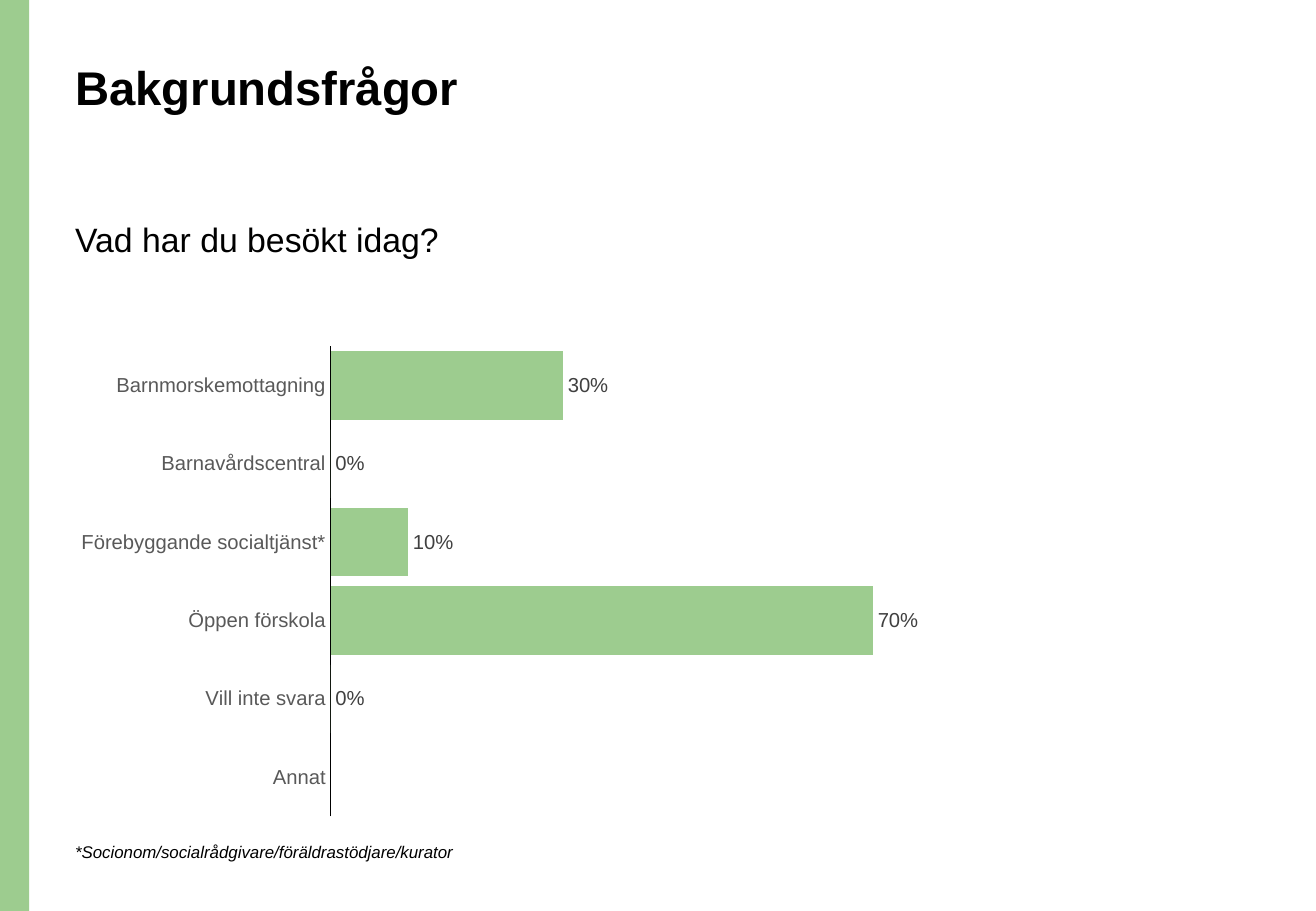
from dataclasses import dataclass

from lxml import etree
from pptx import Presentation
from pptx.chart.data import CategoryChartData
from pptx.dml.color import RGBColor
from pptx.enum.chart import XL_CHART_TYPE, XL_LABEL_POSITION, XL_TICK_MARK
from pptx.enum.shapes import MSO_SHAPE
from pptx.enum.text import MSO_ANCHOR, PP_ALIGN
from pptx.oxml.ns import qn
from pptx.util import Cm, Pt

BAR_CLUSTERED = XL_CHART_TYPE.BAR_CLUSTERED
OUTSIDE_END = XL_LABEL_POSITION.OUTSIDE_END
NO_TICKS = XL_TICK_MARK.NONE
RECTANGLE = MSO_SHAPE.RECTANGLE
TOP = MSO_ANCHOR.TOP
LEFT = PP_ALIGN.LEFT


@dataclass(frozen=True)
class Theme:
    font: str = "Arial"
    green: RGBColor = RGBColor(0x9D, 0xCC, 0x8F)
    black: RGBColor = RGBColor(0, 0, 0)
    axis_text: RGBColor = RGBColor(0x59, 0x59, 0x59)
    label_text: RGBColor = RGBColor(0x40, 0x40, 0x40)
    title: Pt = Pt(28)
    question: Pt = Pt(20)
    chart: Pt = Pt(12)
    note: Pt = Pt(10)


THEME = Theme()
SLIDE_W, SLIDE_H = Cm(27.51), Cm(19.05)
MARGIN = Cm(1.32)
VISITS = {
    "Barnmorskemottagning": 0.3,
    "Barnavårdscentral": 0,
    "Förebyggande socialtjänst*": 0.1,
    "Öppen förskola": 0.7,
    "Vill inte svara": 0,
    "Annat": None,
}


def style_font(font, size, color, bold=False, italic=False):
    font.name, font.size = THEME.font, size
    font.bold, font.italic = bold, italic
    font.color.rgb = color


def fill_text(sp, box, text, size, spacing=1.0, bold=False, italic=False):
    """Place a text shape in box and write one paragraph in it."""
    sp.left, sp.top, sp.width, sp.height = box
    tf = sp.text_frame
    tf.word_wrap = True
    tf.vertical_anchor = TOP
    p = tf.paragraphs[0]
    p.alignment = LEFT
    p.line_spacing = spacing
    r = p.add_run()
    r.text = text
    style_font(r.font, size, THEME.black, bold, italic)


def add_side_band(slide, box):
    sp = slide.shapes.add_shape(RECTANGLE, *box)
    sp.shadow.inherit = False
    sp.fill.solid()
    sp.fill.fore_color.rgb = THEME.green
    sp.line.fill.background()


def set_plot_area(chart, **fractions):
    """Fix the inner plot area as fractions of the chart frame."""
    plot_area = chart.plots[0]._element.getparent()
    for old in plot_area.findall(qn("c:layout")):
        plot_area.remove(old)
    layout = etree.Element(qn("c:layout"))
    manual = etree.SubElement(layout, qn("c:manualLayout"))
    settings = {"layoutTarget": "inner", "xMode": "edge", "yMode": "edge", **fractions}
    for name, value in settings.items():
        etree.SubElement(manual, qn(f"c:{name}")).set("val", str(value))
    plot_area.insert(0, layout)


def add_visit_chart(slide, box):
    data = CategoryChartData(number_format="0%")
    data.categories = list(VISITS)
    data.add_series("Series 1", list(VISITS.values()))
    chart = slide.shapes.add_chart(BAR_CLUSTERED, *box, data).chart
    chart.has_legend = chart.has_title = False
    style_font(chart.font, THEME.note, THEME.black)
    set_plot_area(chart, x=0.295, y=0.02, w=0.684, h=0.96)

    cat = chart.category_axis
    cat.reverse_order = True
    cat.major_tick_mark = cat.minor_tick_mark = NO_TICKS
    cat.format.line.color.rgb = THEME.black
    cat.format.line.width = Pt(0.75)
    style_font(cat.tick_labels.font, THEME.chart, THEME.axis_text)

    val = chart.value_axis
    val.minimum_scale, val.maximum_scale = 0, 0.8
    val.has_major_gridlines = False
    val.visible = False

    plot = chart.plots[0]
    plot.gap_width = 15
    plot.vary_by_categories = False
    series = plot.series[0]
    series.format.fill.solid()
    series.format.fill.fore_color.rgb = THEME.green
    labels = series.data_labels
    labels.show_value = True
    labels.position = OUTSIDE_END
    labels.number_format = "0%"
    labels.number_format_is_linked = False
    style_font(labels.font, THEME.chart, THEME.label_text)


def add_question_slide(prs):
    slide = prs.slides.add_slide(prs.slide_layouts[5])
    add_side_band(slide, (0, 0, Cm(0.61), SLIDE_H))
    fill_text(slide.shapes.title, (MARGIN, Cm(1.22), Cm(23.72), Cm(2.59)),
              "Bakgrundsfrågor", THEME.title, spacing=0.9, bold=True)

    question = (MARGIN, Cm(4.55), Cm(16.51), Cm(1.88))
    fill_text(slide.shapes.add_textbox(*question), question,
              "Vad har du besökt idag?", THEME.question, spacing=0.9)

    add_visit_chart(slide, (MARGIN, Cm(7.04), Cm(18.95), Cm(10.24)))

    note = (MARGIN, Cm(17.48), Cm(13.77), Cm(0.69))
    fill_text(slide.shapes.add_textbox(*note), note,
              "*Socionom/socialrådgivare/föräldrastödjare/kurator",
              THEME.note, italic=True)


def main():
    prs = Presentation()
    prs.slide_width, prs.slide_height = SLIDE_W, SLIDE_H
    add_question_slide(prs)
    prs.save("out.pptx")


if __name__ == "__main__":
    main()
